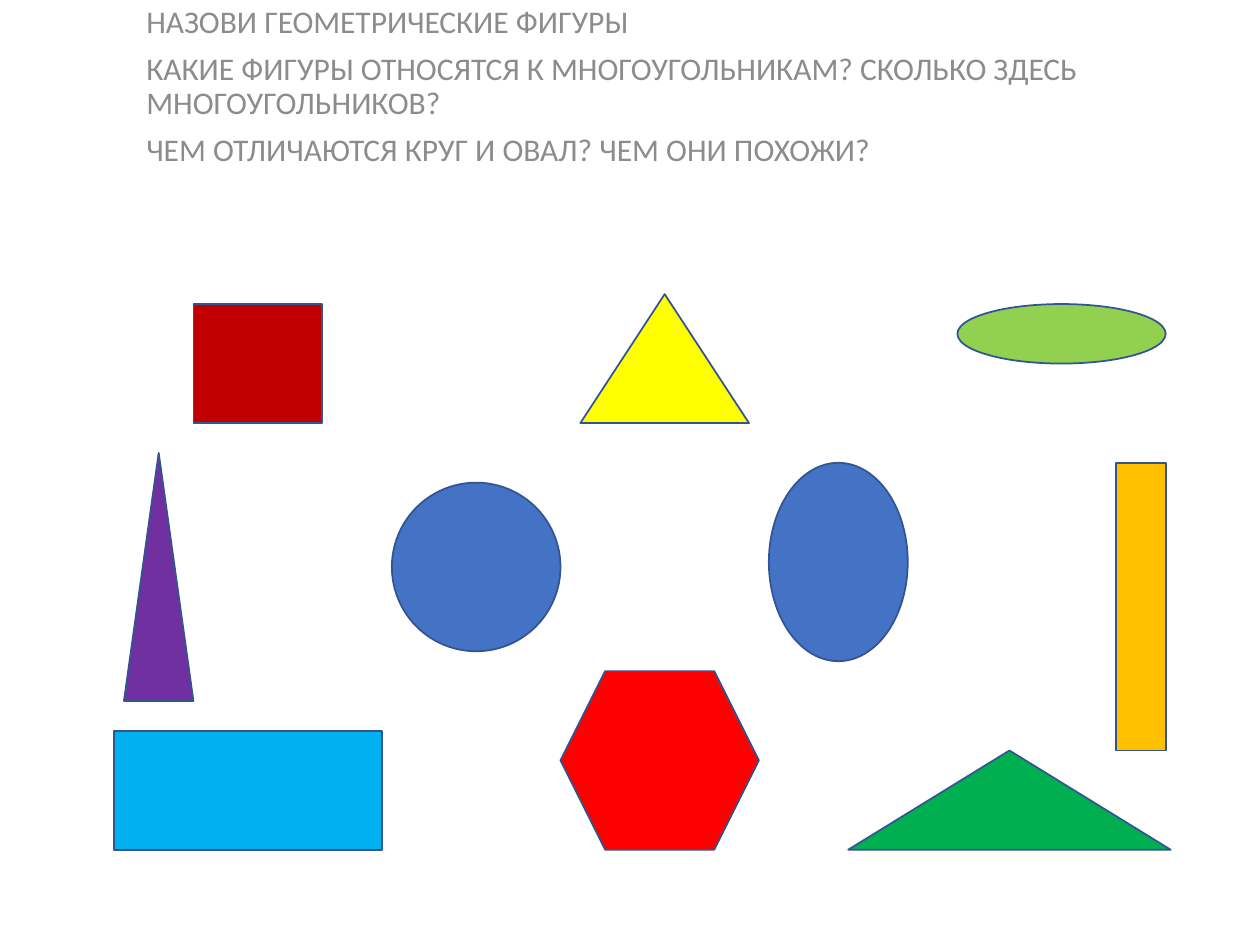
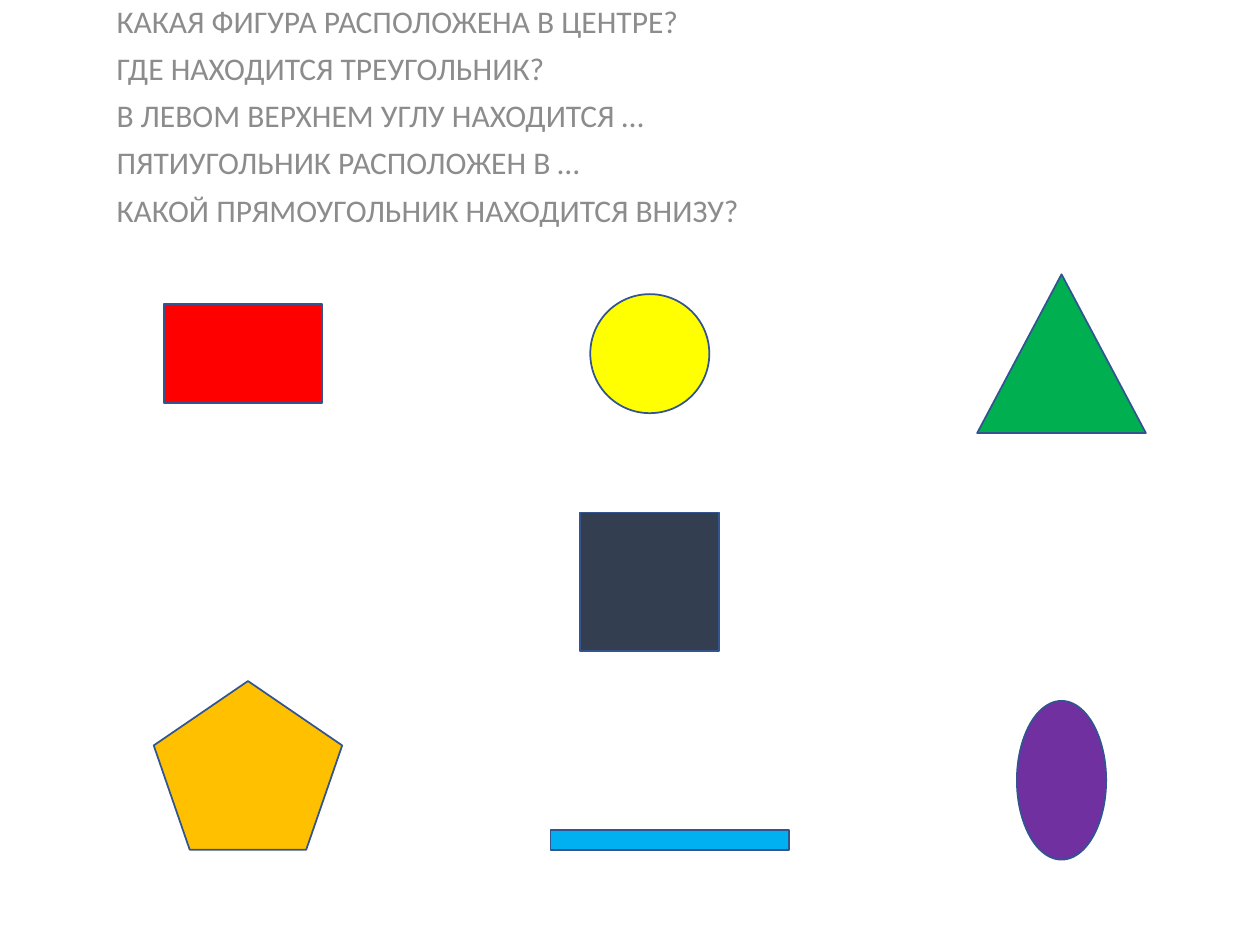
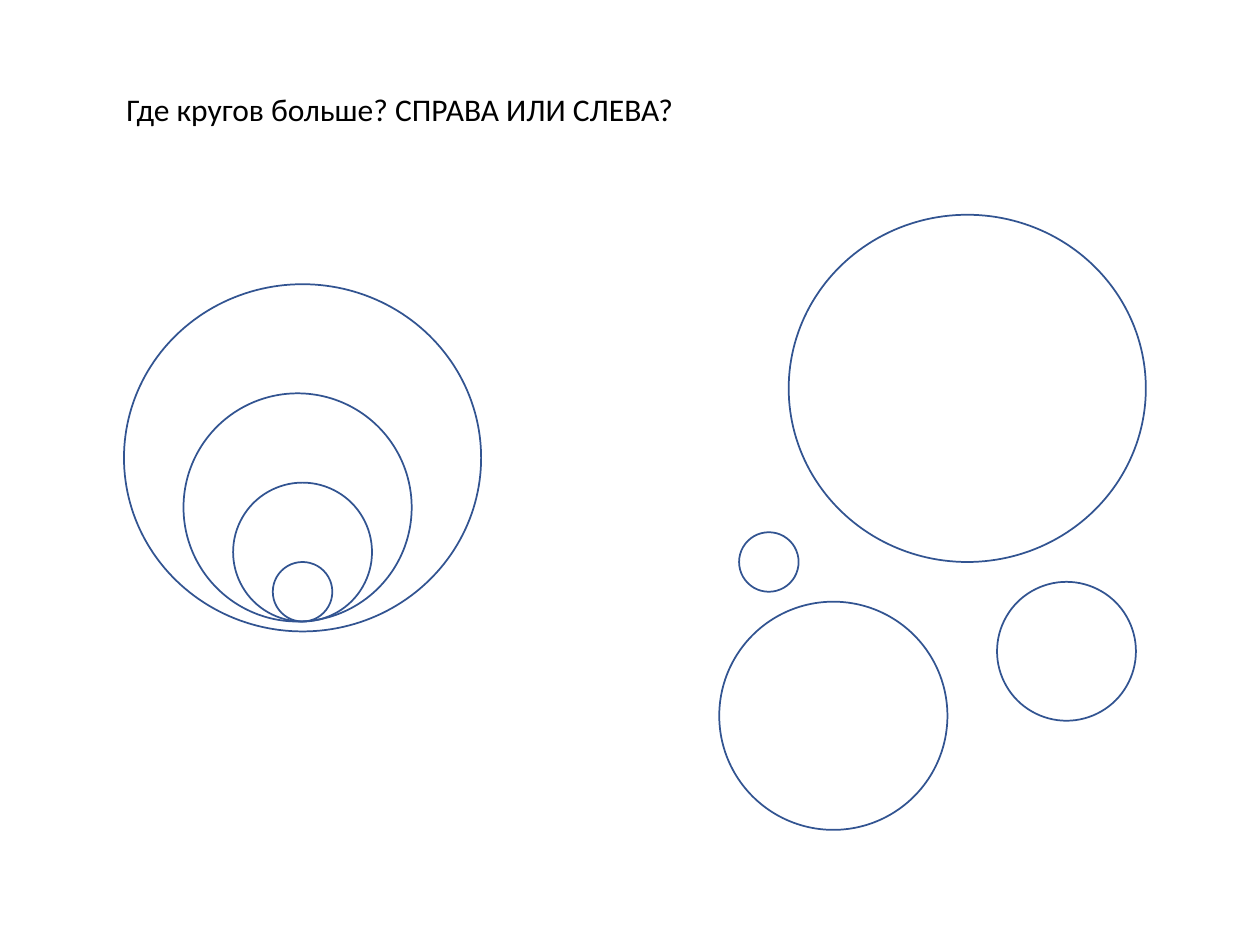
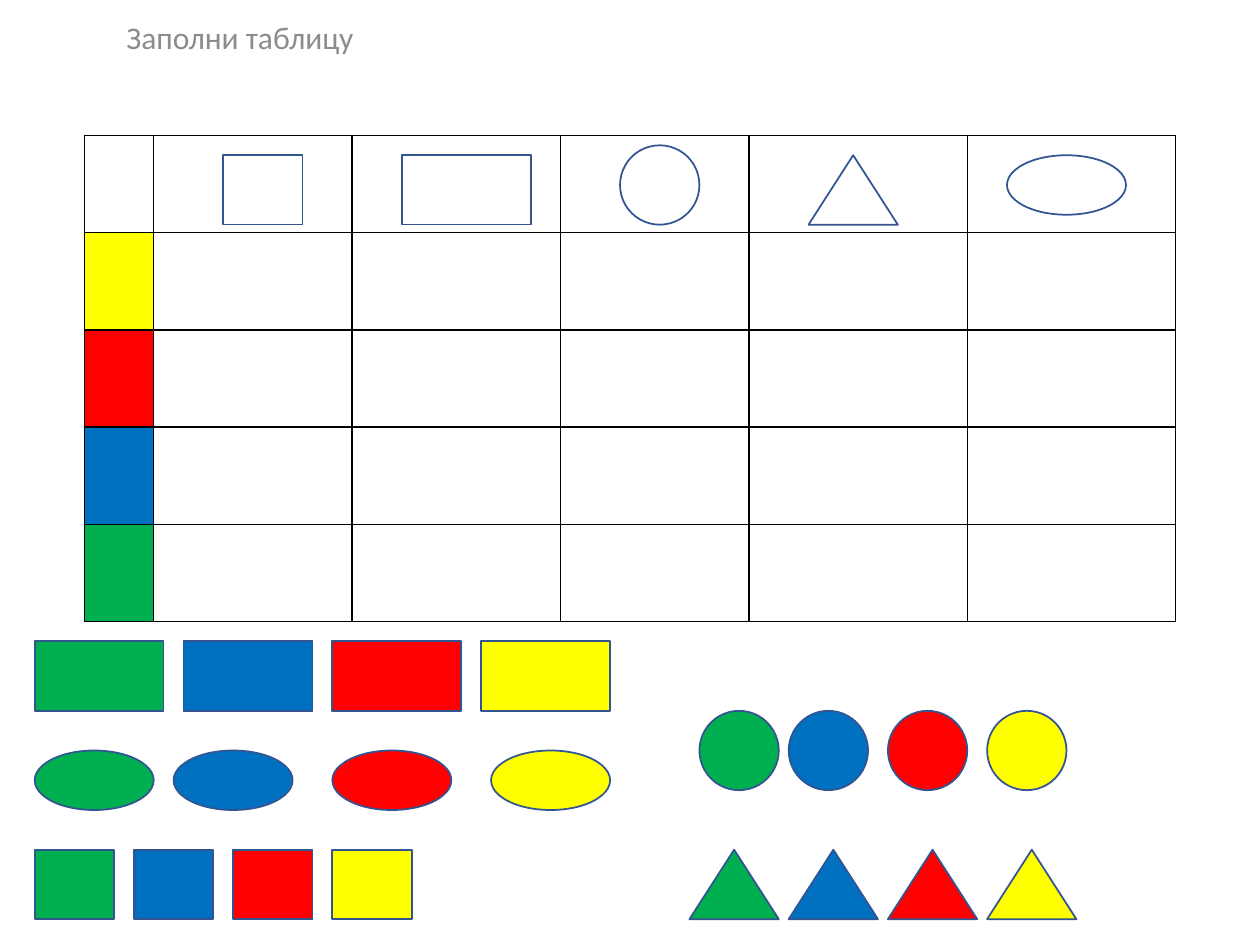
"""Build four slides of geometry exercises for children."""
from lxml import etree
from pptx import Presentation
from pptx.dml.color import RGBColor
from pptx.enum.shapes import MSO_SHAPE
from pptx.enum.text import MSO_ANCHOR
from pptx.oxml.ns import qn
from pptx.util import Cm, Pt

RECT = MSO_SHAPE.RECTANGLE
OVAL = MSO_SHAPE.OVAL
TRIANGLE = MSO_SHAPE.ISOSCELES_TRIANGLE
HEXAGON = MSO_SHAPE.HEXAGON
PENTAGON = MSO_SHAPE.REGULAR_PENTAGON
TOP, BOTTOM = MSO_ANCHOR.TOP, MSO_ANCHOR.BOTTOM

FONT = "Calibri"
GREY, BLACK, OUTLINE = "8C8C8C", "000000", "325491"
YELLOW, RED, GREEN = "FFFF00", "FF0000", "00B050"
BLUE, SKY, ORANGE = "0070C0", "00B0F0", "FFC000"
PURPLE, ROYAL, CRIMSON = "7030A0", "4472C4", "C00000"
LIME, SLATE = "92D050", "333F50"

rgb = RGBColor.from_string


def add_figure(slide, preset, left, top, width, height, color=None):
    figure = slide.shapes.add_shape(preset, Cm(left), Cm(top), Cm(width), Cm(height))
    figure.shadow.inherit = False
    figure.line.color.rgb = rgb(OUTLINE)
    figure.line.width = Pt(1)
    if color:
        figure.fill.solid()
        figure.fill.fore_color.rgb = rgb(color)
    else:
        figure.fill.background()


def add_task(slide, box, lines, color=GREY, anchor=TOP, space=7.5):
    frame = slide.shapes.add_textbox(*map(Cm, box)).text_frame
    frame.word_wrap = True
    frame.vertical_anchor = anchor
    frame.text = "\n".join(lines)
    for paragraph in frame.paragraphs:
        paragraph.line_spacing = 0.9
        paragraph.space_before = Pt(space)
        paragraph.font.name = FONT
        paragraph.font.size = Pt(18)
        paragraph.font.color.rgb = rgb(color)


prs = Presentation()
prs.slide_width, prs.slide_height = Cm(25.4), Cm(19.05)
naming, places, circles, sorting = [
    prs.slides.add_slide(prs.slide_layouts[6]) for _ in range(4)
]

add_task(naming, (2.7, 0, 21, 4.17), [
    "НАЗОВИ ГЕОМЕТРИЧЕСКИЕ ФИГУРЫ",
    "КАКИЕ ФИГУРЫ ОТНОСЯТСЯ К МНОГОУГОЛЬНИКАМ? СКОЛЬКО ЗДЕСЬ МНОГОУГОЛЬНИКОВ?",
    "ЧЕМ ОТЛИЧАЮТСЯ КРУГ И ОВАЛ? ЧЕМ ОНИ ПОХОЖИ?",
])
for figure in [
    (RECT, 3.9, 6.13, 2.6, 2.4, CRIMSON),
    (RECT, 2.3, 14.73, 5.4, 2.4, SKY),
    (RECT, 22.5, 9.33, 1, 5.8, ORANGE),
    (OVAL, 7.9, 9.73, 3.4, 3.4, ROYAL),
    (OVAL, 15.5, 9.33, 2.8, 4, ROYAL),
    (OVAL, 19.3, 6.13, 4.2, 1.2, LIME),
    (TRIANGLE, 11.7, 5.93, 3.4, 2.6, YELLOW),
    (TRIANGLE, 17.1, 15.13, 6.5, 2, GREEN),
    (HEXAGON, 11.3, 13.53, 4, 3.6, RED),
    (TRIANGLE, 2.5, 9.13, 1.4, 5, PURPLE),
]:
    add_figure(naming, *figure)

add_task(places, (2.1, 0, 21.6, 4.93), [
    "КАКАЯ ФИГУРА РАСПОЛОЖЕНА В ЦЕНТРЕ?",
    "ГДЕ НАХОДИТСЯ ТРЕУГОЛЬНИК?",
    "В ЛЕВОМ ВЕРХНЕМ УГЛУ НАХОДИТСЯ …",
    "ПЯТИУГОЛЬНИК РАСПОЛОЖЕН В …",
    "КАКОЙ ПРЯМОУГОЛЬНИК НАХОДИТСЯ ВНИЗУ?",
])
for figure in [
    (RECT, 11.7, 10.33, 2.8, 2.8, SLATE),
    (RECT, 3.3, 6.13, 3.2, 2, RED),
    (RECT, 11.1, 16.73, 4.8, 0.4, SKY),
    (OVAL, 11.9, 5.93, 2.4, 2.4, YELLOW),
    (OVAL, 20.5, 14.13, 1.8, 3.2, PURPLE),
    (PENTAGON, 3.1, 13.73, 3.8, 3.4, ORANGE),
    (TRIANGLE, 19.7, 5.53, 3.4, 3.2, GREEN),
]:
    add_figure(places, *figure)

add_task(circles, (2.3, 0.91, 21.6, 1.8),
         ["Где кругов больше? СПРАВА ИЛИ СЛЕВА?"], BLACK, BOTTOM, 0)
for width, height, nested, scattered in [
    (7.2, 7, (2.5, 5.73), (15.9, 4.33)),
    (4.6, 4.6, (3.7, 7.93), (14.5, 12.13)),
    (2.8, 2.8, (4.7, 9.73), (20.1, 11.73)),
    (1.2, 1.2, (5.5, 11.33), (14.9, 10.73)),
]:
    for left, top in (nested, scattered):
        add_figure(circles, OVAL, left, top, width, height)

add_task(sorting, (2.3, 0.33, 21.6, 2), ["Заполни таблицу"])
column_widths = [1.4, 4, 4.2, 3.8, 4.4, 4.2]
row_colors = [None, YELLOW, RED, BLUE, GREEN]
row_height = 1.96
grid = sorting.shapes.add_table(
    len(row_colors), len(column_widths), Cm(1.7), Cm(2.73),
    Cm(sum(column_widths)), Cm(row_height * len(row_colors))).table
grid.first_row = grid.horz_banding = False
for column, width in zip(grid.columns, column_widths):
    column.width = Cm(width)
for row, color in zip(grid.rows, row_colors):
    row.height = Cm(row_height)
    for index, cell in enumerate(row.cells):
        properties = cell._tc.get_or_add_tcPr()
        for side in ("a:lnL", "a:lnR", "a:lnT", "a:lnB"):
            border = etree.SubElement(properties, qn(side), w=str(Pt(1)))
            border_fill = etree.SubElement(border, qn("a:solidFill"))
            etree.SubElement(border_fill, qn("a:srgbClr"), val=BLACK)
        if color and index == 0:
            cell.fill.solid()
            cell.fill.fore_color.rgb = rgb(color)
        else:
            cell.fill.background()

for preset, width, height, header, card_lefts, card_top in [
    (RECT, 1.6, 1.4, (4.5, 3.13), (0.7, 2.7, 4.7, 6.7), 17.13),
    (RECT, 2.6, 1.4, (8.1, 3.13), (0.7, 3.7, 6.7, 9.7), 12.93),
    (OVAL, 1.6, 1.6, (12.5, 2.93), (14.1, 15.9, 17.9, 19.9), 14.33),
    (TRIANGLE, 1.8, 1.4, (16.3, 3.13), (13.9, 15.9, 17.9, 19.9), 17.13),
    (OVAL, 2.4, 1.2, (20.3, 3.13), (0.7, 3.5, 6.7, 9.9), 15.13),
]:
    add_figure(sorting, preset, *header, width, height)
    for left, color in zip(card_lefts, (GREEN, BLUE, RED, YELLOW)):
        add_figure(sorting, preset, left, card_top, width, height, color)

prs.save("out.pptx")
